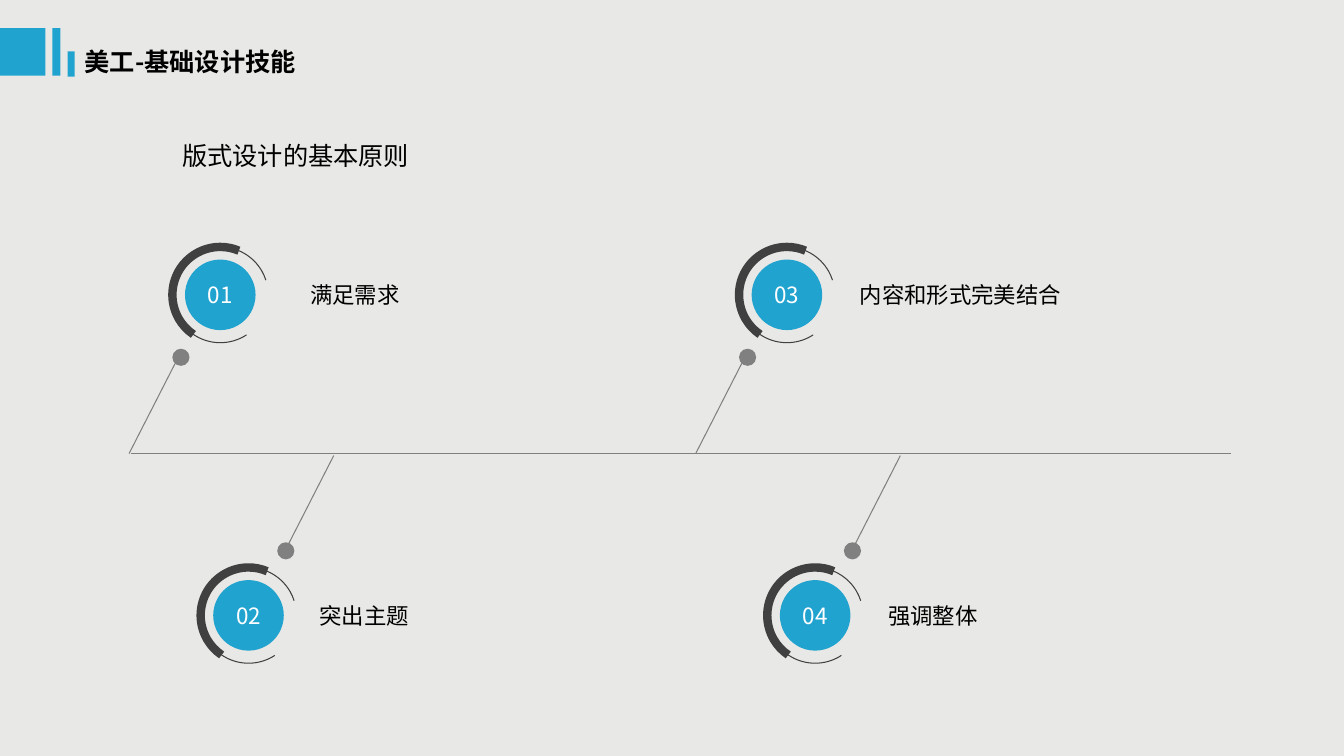
from dataclasses import dataclass

from lxml import etree
from pptx import Presentation
from pptx.dml.color import RGBColor
from pptx.enum import shapes, text
from pptx.oxml.ns import qn
from pptx.util import Inches, Pt

COLORS = {
    "background": "E8E8E6",
    "accent": "21A3D0",
    "ring": "404040",
    "branch": "808080",
    "ink": "000000",
    "number": "FFFFFF",
}
FONT = "Noto Sans CJK SC"
COLUMN_STEP = 5.62
DISC_SIZE, RING_SIZE, DOT_SIZE = 0.7, 0.95, 0.17
DISC_INSET = (RING_SIZE - DISC_SIZE) / 2
THIN_ARC = (56.77, 342.15)
THICK_ARC = (124.15, 292.85)


@dataclass(frozen=True)
class Branch:
    """Places of one arm of the timeline, in inches, for the first column."""
    joint: tuple[float, float]
    tip: tuple[float, float]
    dot: tuple[float, float]
    ring: tuple[float, float]
    label_top: float


@dataclass(frozen=True)
class Principle:
    number: str
    label: str
    label_left: float
    column: int
    branch: Branch


@dataclass(frozen=True)
class Bar:
    left: float
    top: float
    width: float
    height: float


UPPER = Branch((1.28, 4.5), (1.75, 3.58), (1.71, 3.46), (1.71, 2.45), 2.74)
LOWER = Branch((3.31, 4.52), (2.84, 5.44), (2.75, 5.38), (1.99, 5.63), 5.92)
PRINCIPLES = [
    Principle("01", " 满足需求", 2.93, 0, UPPER),
    Principle("02", "突出主题", 3.07, 0, LOWER),
    Principle("03", "内容和形式完美结合", 8.43, 1, UPPER),
    Principle("04", "强调整体", 8.71, 1, LOWER),
]
HEADER_BARS = [
    Bar(0, 0.28, 0.45, 0.47),
    Bar(0.52, 0.28, 0.08, 0.47),
    Bar(0.67, 0.51, 0.07, 0.25),
]


def color(name: str) -> RGBColor:
    return RGBColor.from_string(COLORS[name])


def add_run(paragraph, wording: str, size: float, ink: str, bold: bool = False) -> None:
    run = paragraph.add_run()
    run.text = wording
    run.font.size = Pt(size)
    run.font.bold = bold
    run.font.name = FONT
    run.font.color.rgb = color(ink)
    etree.SubElement(run.font._element, qn("a:ea"), typeface=FONT)


def write_line(box, wording: str, size: float, bold: bool = False, before: float = 0) -> None:
    """Fill a box with one left-aligned line of dark text."""
    frame = box.text_frame
    frame.word_wrap = True
    frame.auto_size = text.MSO_AUTO_SIZE.SHAPE_TO_FIT_TEXT
    frame.vertical_anchor = text.MSO_ANCHOR.TOP
    paragraph = frame.paragraphs[0]
    paragraph.alignment = text.PP_ALIGN.LEFT
    paragraph.space_before = Pt(before)
    add_run(paragraph, wording, size, "ink", bold)


def add_textbox(slide, left: float, top: float, width: float, height: float):
    return slide.shapes.add_textbox(Inches(left), Inches(top), Inches(width), Inches(height))


def add_solid(slide, preset, left: float, top: float, width: float, height: float, fill: str):
    solid = slide.shapes.add_shape(
        preset, Inches(left), Inches(top), Inches(width), Inches(height))
    solid.shadow.inherit = False
    solid.fill.solid()
    solid.fill.fore_color.rgb = color(fill)
    solid.line.fill.background()
    return solid


def add_line(slide, start: tuple[float, float], end: tuple[float, float]) -> None:
    line = slide.shapes.add_connector(
        shapes.MSO_CONNECTOR.STRAIGHT, *(Inches(value) for value in (*start, *end)))
    line.line.color.rgb = color("branch")
    line.line.width = Pt(0.75)
    etree.SubElement(line._element.spPr, qn("a:effectLst"))


def add_arc(slide, left: float, top: float, angles: tuple[float, float], weight: float) -> None:
    """Draw part of a ring, clockwise between two angles in degrees."""
    arc = slide.shapes.add_shape(
        shapes.MSO_SHAPE.ARC, Inches(left), Inches(top), Inches(RING_SIZE), Inches(RING_SIZE))
    arc.shadow.inherit = False
    arc.fill.background()
    arc.line.color.rgb = color("ring")
    arc.line.width = Pt(weight)
    for index, degrees in enumerate(angles):
        arc.adjustments[index] = degrees * 0.6


def add_principle(slide, principle: Principle) -> None:
    branch = principle.branch
    offset = principle.column * COLUMN_STEP

    def shifted(point: tuple[float, float]) -> tuple[float, float]:
        return point[0] + offset, point[1]

    oval = shapes.MSO_SHAPE.OVAL
    ring_left, ring_top = shifted(branch.ring)
    add_line(slide, shifted(branch.joint), shifted(branch.tip))
    add_solid(slide, oval, *shifted(branch.dot), DOT_SIZE, DOT_SIZE, "branch")
    disc = add_solid(slide, oval, ring_left + DISC_INSET, ring_top + DISC_INSET,
                     DISC_SIZE, DISC_SIZE, "accent")
    frame = disc.text_frame
    frame.word_wrap = False
    frame.vertical_anchor = text.MSO_ANCHOR.MIDDLE
    frame.paragraphs[0].alignment = text.PP_ALIGN.CENTER
    add_run(frame.paragraphs[0], principle.number, 16, "number")
    add_arc(slide, ring_left, ring_top, THIN_ARC, 0.75)
    add_arc(slide, ring_left, ring_top, THICK_ARC, 6)
    label = add_textbox(slide, principle.label_left, branch.label_top, 3.22, 0.37)
    write_line(label, principle.label, 16, before=6)


def main() -> None:
    deck = Presentation()
    deck.slide_width, deck.slide_height = Inches(13.33), Inches(7.5)
    slide = deck.slides.add_slide(deck.slide_layouts[5])
    slide.background.fill.solid()
    slide.background.fill.fore_color.rgb = color("background")

    add_line(slide, (1.3, 4.5), (12.21, 4.5))
    for principle in PRINCIPLES:
        add_principle(slide, principle)
    for bar in HEADER_BARS:
        add_solid(slide, shapes.MSO_SHAPE.RECTANGLE,
                  bar.left, bar.top, bar.width, bar.height, "accent")

    title = slide.shapes.title
    title.left, title.top = Inches(0.74), Inches(0.41)
    title.width, title.height = Inches(2.71), Inches(0.4)
    write_line(title, "美工-基础设计技能", 18, bold=True)
    write_line(add_textbox(slide, 1.71, 1.34, 2.78, 0.4), "版式设计的基本原则", 18)
    deck.save("out.pptx")


if __name__ == "__main__":
    main()
